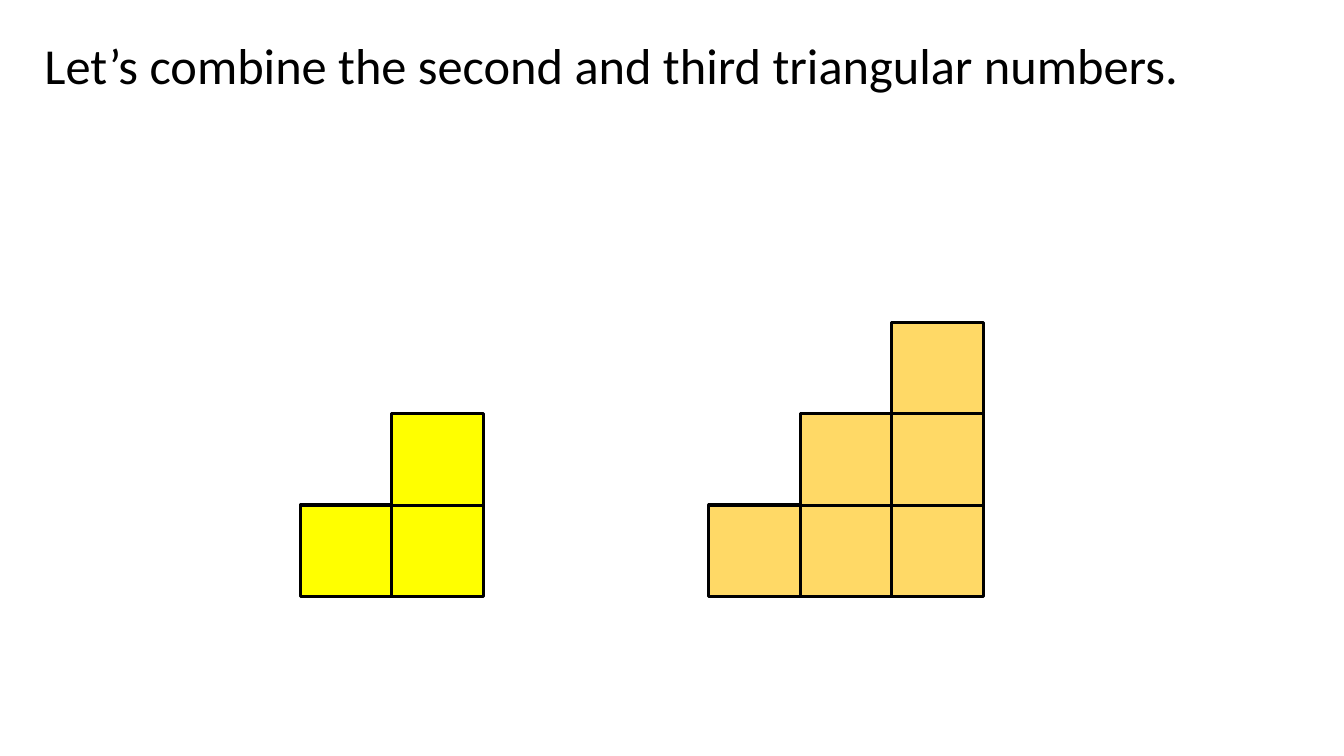
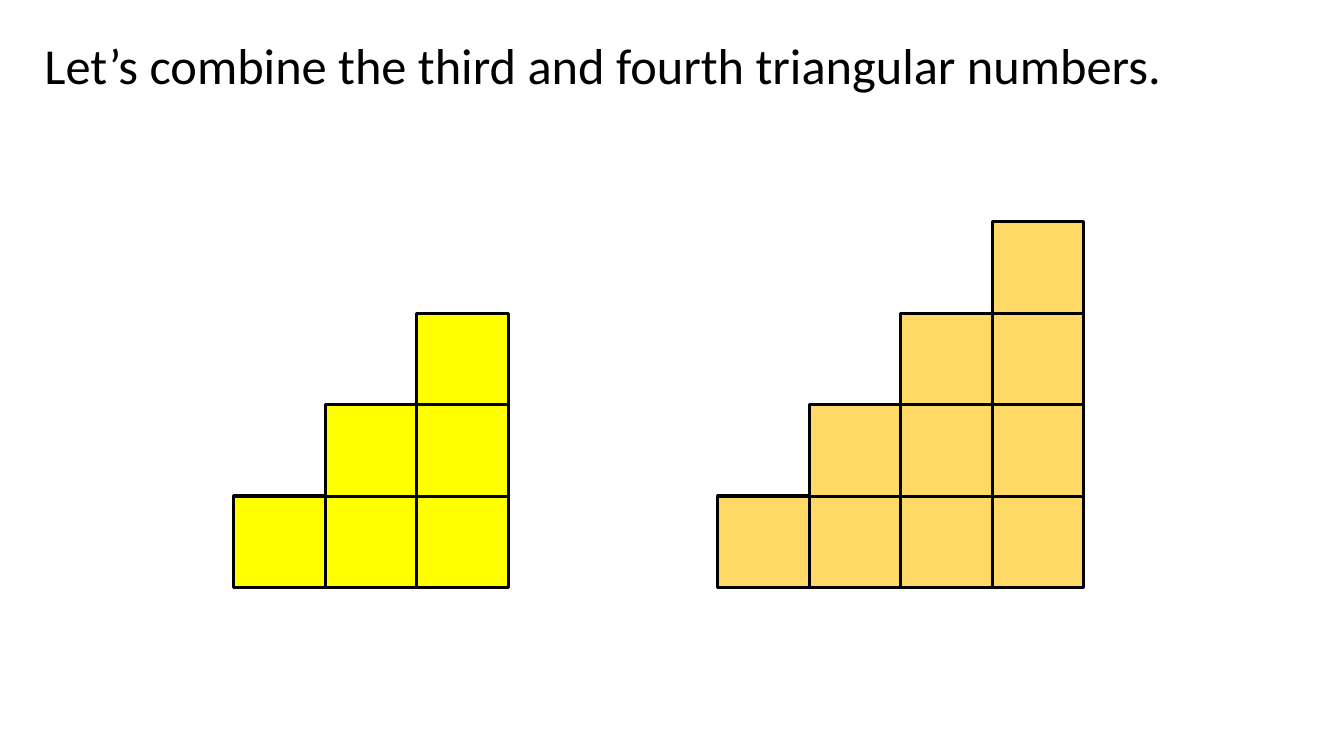
from pptx import Presentation
from pptx.dml.color import RGBColor
from pptx.enum import shapes, text
from pptx.util import Inches, Pt

BLACK = RGBColor(0x00, 0x00, 0x00)
WHITE = RGBColor(0xFF, 0xFF, 0xFF)
YELLOW = RGBColor(0xFF, 0xFF, 0x00)
GOLD = RGBColor(0xFF, 0xD9, 0x66)

FONT = "Calibri"
TITLE_BOX = (0.34, 0.29, 12.51, 0.71)
CELL = 0.91
PITCH = 0.907  # neighbouring squares share an edge line
TITLE_ONLY = 5

# Order of the smaller number, its words, left edges of both staircases, base line
PAGES = [
    (2, "second and third", 2.98, 7.03, 5.92),
    (3, "third and fourth", 2.32, 7.12, 5.83),
]


def add_title(page, words):
    """Fill the title placeholder, left-aligned across the top."""
    title = page.shapes.title
    title.left, title.top, title.width, title.height = map(Inches, TITLE_BOX)
    frame = title.text_frame
    frame.word_wrap = True
    frame.auto_size = text.MSO_AUTO_SIZE.NONE
    frame.vertical_anchor = text.MSO_ANCHOR.TOP
    para = frame.paragraphs[0]
    para.alignment = text.PP_ALIGN.LEFT
    span = para.add_run()
    span.text = words
    span.font.name = FONT
    span.font.size = Pt(36)
    span.font.color.rgb = BLACK


def add_staircase(page, order, left, base, color):
    """Group squares into columns of 1, 2, ... order, standing on the base line."""
    group = page.shapes.add_group_shape()
    for row in range(order):
        for column in range(row, order):
            square = group.shapes.add_shape(
                shapes.MSO_SHAPE.RECTANGLE,
                Inches(left + column * PITCH),
                Inches(base - CELL - row * PITCH),
                Inches(CELL), Inches(CELL))
            square.shadow.inherit = False
            square.fill.solid()
            square.fill.fore_color.rgb = color
            square.line.color.rgb = BLACK
            square.line.width = Pt(2.25)


def add_page(deck, order, ordinals, small_left, large_left, base):
    """Show two consecutive triangular numbers side by side."""
    page = deck.slides.add_slide(deck.slide_layouts[TITLE_ONLY])
    add_staircase(page, order + 1, large_left, base, GOLD)
    add_title(page, f"Let’s combine the {ordinals} triangular numbers.")
    add_staircase(page, order, small_left, base, YELLOW)


def main():
    deck = Presentation()
    deck.slide_width, deck.slide_height = Inches(13.33), Inches(7.5)
    # Shared white background
    backdrop = deck.slide_master.background.fill
    backdrop.solid()
    backdrop.fore_color.rgb = WHITE
    for content in PAGES:
        add_page(deck, *content)
    deck.save("out.pptx")


if __name__ == "__main__":
    main()
